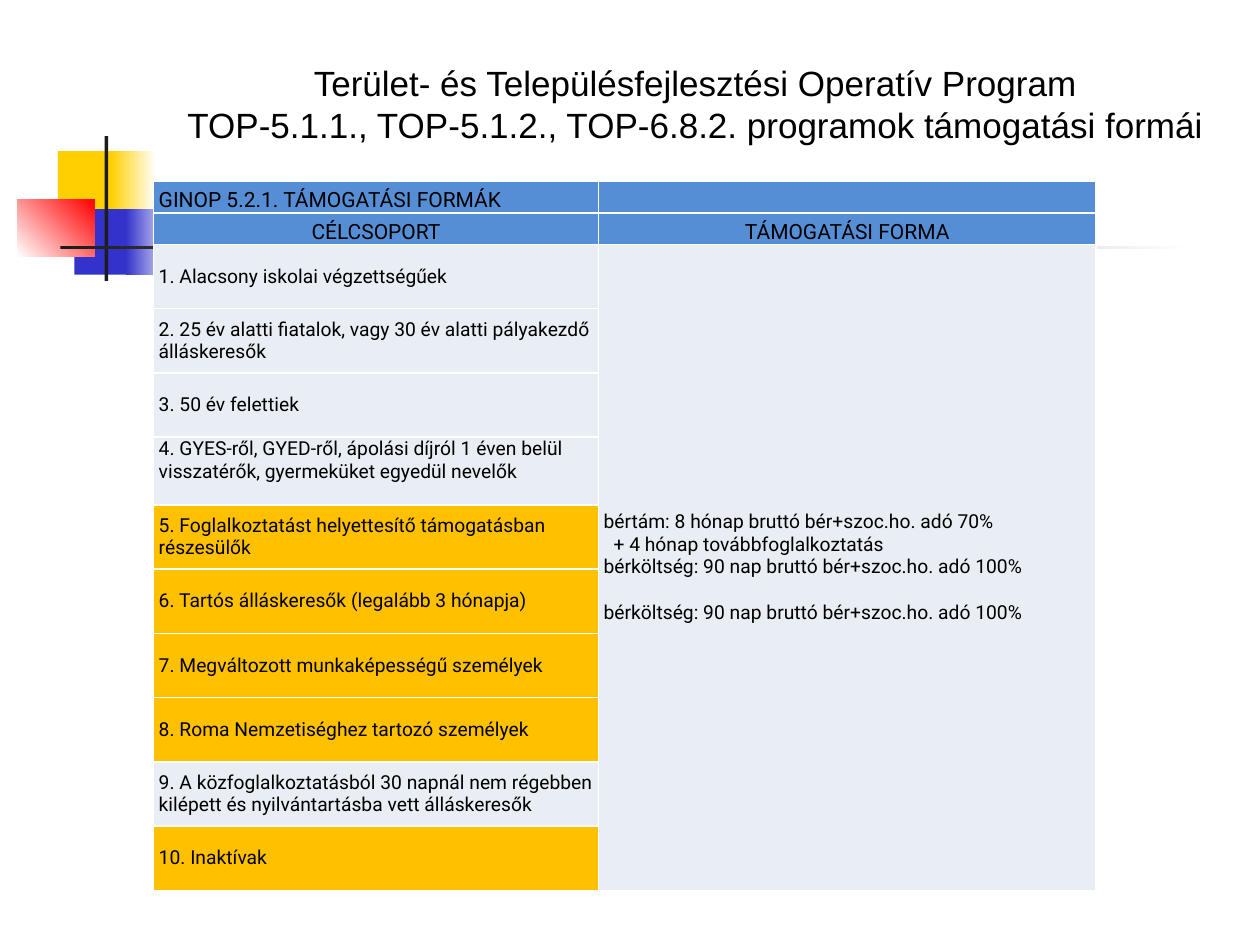
from lxml import etree
from pptx import Presentation, util as u
from pptx.dml.color import RGBColor
from pptx.enum import shapes, text
from pptx.oxml.ns import qn

COLUMNS, ROWS = 10, 7.5  # layout grid: one cell is one inch square
BLACK, WHITE, INK = "000000", "FFFFFF", "1C1C1C"
YELLOW, BLUE = "FFCF01", "3333CC"
HEADER, PALE, AMBER = "558ED5", "E9EDF4", "FFC000"
CENTER, LEFT = text.PP_ALIGN.CENTER, text.PP_ALIGN.LEFT
MIDDLE, BOTTOM = text.MSO_ANCHOR.MIDDLE, text.MSO_ANCHOR.BOTTOM


def color(value):
    return RGBColor.from_string(value)


class Designer:
    """Holds the style and the current slide."""

    title_font, table_font = "Arial", "Roboto"
    title_size, header_size, body_size = 20, 12, 11

    def __init__(self, deck):
        self.unit_x = deck.slide_width / COLUMNS
        self.unit_y = deck.slide_height / ROWS
        self.page = deck.slides.add_slide(deck.slide_layouts[6])

    def place(self, left, top, width, height):
        return (u.Emu(round(left * self.unit_x)), u.Emu(round(top * self.unit_y)),
                u.Emu(round(width * self.unit_x)), u.Emu(round(height * self.unit_y)))

    def block(self, area, start, end=None, angle=0):
        """A plain rectangle, or a gradient one when an end colour is given."""
        box = self.page.shapes.add_shape(shapes.MSO_SHAPE.RECTANGLE, *self.place(*area))
        box.shadow.inherit = False
        box.line.fill.background()
        if end is None:
            box.fill.solid()
            box.fill.fore_color.rgb = color(start)
            return
        box.fill.gradient()
        box.fill.gradient_angle = angle
        for stop, value, position in zip(box.fill.gradient_stops, (start, end), (0, 1)):
            stop.color.rgb = color(value)
            stop.position = position

    def span(self, para, words, size, font):
        span = para.add_run()
        span.text = words
        span.font.size, span.font.name = u.Pt(size), font
        span.font.color.rgb = color(BLACK)

    def title(self, area, lines):
        box = self.page.shapes.add_textbox(*self.place(*area))
        frame = box.text_frame
        frame.word_wrap, frame.vertical_anchor = True, MIDDLE
        para = frame.paragraphs[0]
        para.alignment = CENTER
        for number, line in enumerate(lines):
            if number:
                para.add_line_break()
            self.span(para, line, self.title_size, self.title_font)

    def table(self, left, top, widths, heights):
        area = self.place(left, top, sum(widths), sum(heights))
        grid = self.page.shapes.add_table(len(heights), len(widths), *area).table
        grid.first_row = grid.horz_banding = False
        for column, width in zip(grid.columns, widths):
            column.width = u.Emu(round(width * self.unit_x))
        for row, height in zip(grid.rows, heights):
            row.height = u.Emu(round(height * self.unit_y))
        return grid

    def cell(self, cell, lines, fill, size, align=LEFT, anchor=MIDDLE, bottom=0):
        """Each line is (words, indent in inches, space before in points)."""
        cell.margin_left = cell.margin_right = u.Inches(0.04)
        cell.margin_top, cell.margin_bottom = 0, u.Inches(bottom)
        cell.vertical_anchor = anchor
        self.borders(cell)
        cell.fill.solid()
        cell.fill.fore_color.rgb = color(fill)
        frame = cell.text_frame
        for number, (words, indent, before) in enumerate(lines):
            para = frame.add_paragraph() if number else frame.paragraphs[0]
            para.alignment, para.space_before = align, u.Pt(before)
            if indent:
                para._p.get_or_add_pPr().set("marL", str(u.Inches(indent)))
            self.span(para, words, size, self.table_font)
        if not lines:  # an empty cell must not stretch its row
            end = etree.SubElement(frame.paragraphs[0]._p, qn("a:endParaRPr"))
            end.set("sz", str(size * 100))

    def borders(self, cell):
        properties = cell._tc.get_or_add_tcPr()
        for side in ("a:lnL", "a:lnR", "a:lnT", "a:lnB"):
            line = etree.SubElement(properties, qn(side), w=str(u.Pt(1)))
            paint = etree.SubElement(line, qn("a:solidFill"))
            etree.SubElement(paint, qn("a:srgbClr"), val=WHITE)


# Target groups and the fill of their cells
GROUPS = [
    ("1. Alacsony iskolai végzettségűek", PALE),
    ("2. 25 év alatti fiatalok, vagy 30 év alatti pályakezdő álláskeresők", PALE),
    ("3. 50 év felettiek", PALE),
    ("4. GYES-ről, GYED-ről, ápolási díjról 1 éven belül visszatérők, "
     "gyermeküket egyedül nevelők", PALE),
    ("5. Foglalkoztatást helyettesítő támogatásban részesülők", AMBER),
    ("6. Tartós álláskeresők (legalább 3 hónapja)", AMBER),
    ("7. Megváltozott munkaképességű személyek", AMBER),
    ("8. Roma Nemzetiséghez tartozó személyek", AMBER),
    ("9. A közfoglalkoztatásból 30 napnál nem régebben kilépett és "
     "nyilvántartásba vett álláskeresők", PALE),
    ("10. Inaktívak", AMBER),
]
RAISED_GROUP = 3  # its text sits at the top of a slightly taller row
WAGE_COST = "bérköltség: 90 nap bruttó bér+szoc.ho. adó 100%"
SUPPORT = [
    ("bértám: 8 hónap bruttó bér+szoc.ho. adó 70%", 0, 0),
    ("+ 4 hónap továbbfoglalkoztatás", 0.08, 0),
    (WAGE_COST, 0, 0),
    (WAGE_COST, 0, 13),
]


def main():
    deck = Presentation()
    deck.slide_width, deck.slide_height = u.Inches(COLUMNS), u.Inches(ROWS)
    design = Designer(deck)

    # Corner ornament
    design.block((0.46, 1.2, 0.48, 0.52), YELLOW)
    design.block((0.88, 1.2, 0.36, 0.52), YELLOW, WHITE)
    design.block((0.59, 1.66, 0.46, 0.52), BLUE)
    design.block((1, 1.66, 0.4, 0.52), BLUE, WHITE)
    design.block((0.14, 1.58, 0.61, 0.46), WHITE, "FF0000", angle=45)
    design.block((0.83, 1.08, 0.03, 1.15), INK)
    design.block((0.48, 1.95, 9, 0.03), INK, WHITE)

    design.title((1.26, 0.23, 8.52, 1.19), [
        "Terület- és Településfejlesztési Operatív Program",
        "TOP-5.1.1., TOP-5.1.2., TOP-6.8.2. programok támogatási formái"])

    # Table frame
    heights = [0.25] * 2 + [0.51] * len(GROUPS)
    heights[2 + RAISED_GROUP] = 0.53
    grid = design.table(1.22, 1.44, [3.53, 3.95], heights)

    # Header rows
    headers = [[("GINOP 5.2.1. TÁMOGATÁSI FORMÁK", LEFT), ("", LEFT)],
               [("CÉLCSOPORT", CENTER), ("TÁMOGATÁSI FORMA", CENTER)]]
    for row, labels in enumerate(headers):
        for column, (label, align) in enumerate(labels):
            lines = [(label, 0, 0)] if label else []
            design.cell(grid.cell(row, column), lines, HEADER,
                        design.header_size, align, BOTTOM)

    # Target groups, with one shared cell for the support
    grid.cell(2, 1).merge(grid.cell(len(heights) - 1, 1))
    for number, (group, fill) in enumerate(GROUPS):
        design.cell(grid.cell(2 + number, 0), [(group, 0, 0)], fill, design.body_size,
                    bottom=0.17 if number == RAISED_GROUP else 0)
        design.cell(grid.cell(2 + number, 1), [] if number else SUPPORT,
                    PALE, design.body_size)

    deck.save("out.pptx")


if __name__ == "__main__":
    main()
